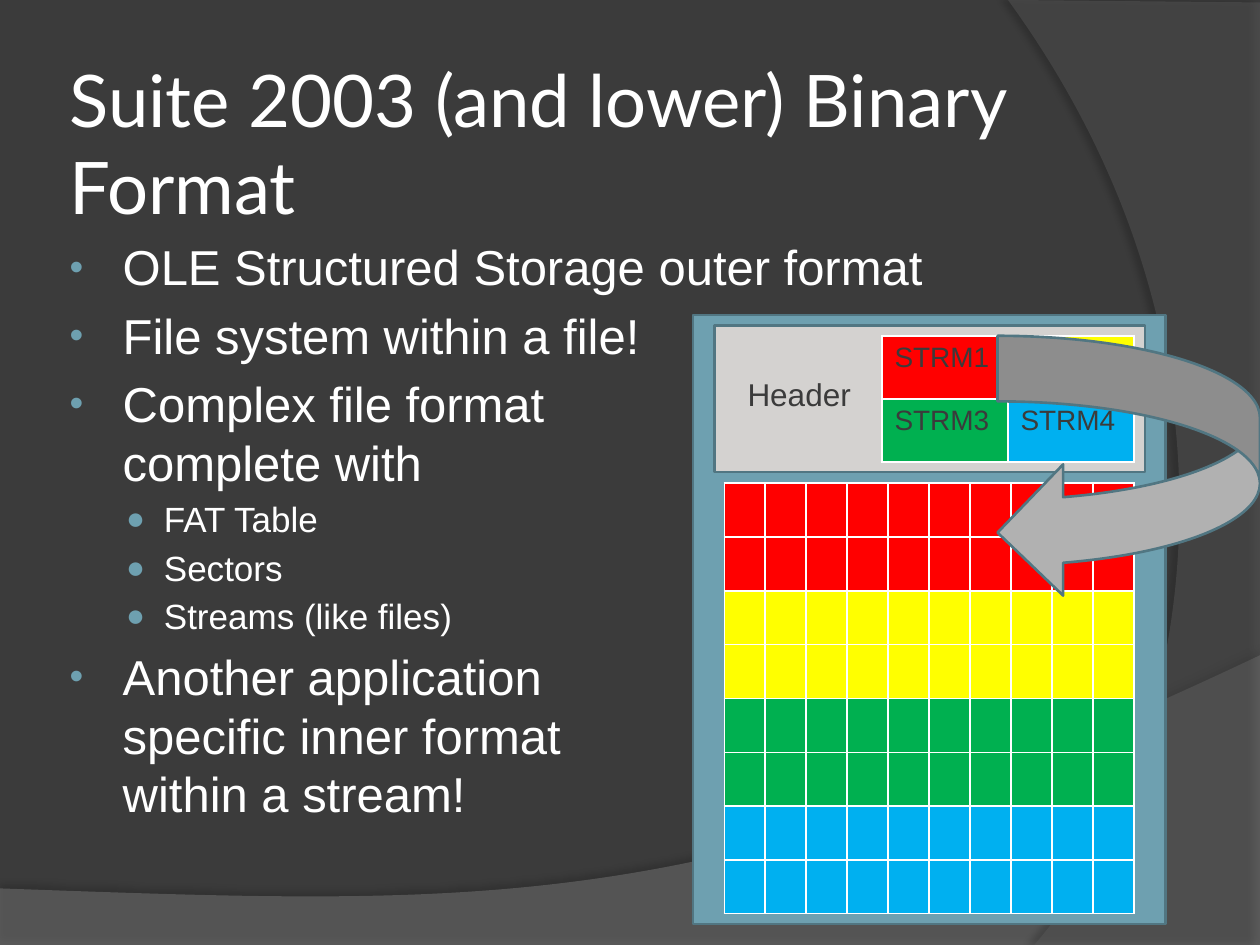
from lxml import etree
from pptx import Presentation
from pptx.dml.color import RGBColor
from pptx.enum.shapes import MSO_SHAPE
from pptx.enum.text import MSO_ANCHOR, MSO_AUTO_SIZE, PP_ALIGN
from pptx.oxml import parse_xml
from pptx.oxml.ns import qn
from pptx.util import Cm, Pt

RECT, ARROW = MSO_SHAPE.RECTANGLE, MSO_SHAPE.CURVED_LEFT_ARROW
LEFT, TOP, MIDDLE = PP_ALIGN.LEFT, MSO_ANCHOR.TOP, MSO_ANCHOR.MIDDLE
FIXED = MSO_AUTO_SIZE.NONE
NS = 'xmlns:a="http://schemas.openxmlformats.org/drawingml/2006/main"'
HUES = {
    "back": "3B3B3B", "wave": "7F7F7F", "arc": "5E5E5E", "white": "FFFFFF",
    "teal": "6EA0B0", "edge": "517682", "pale": "D4D2D0", "arrow": "B1B1B1",
    "red": "FF0000", "yellow": "FFFF00", "green": "00B050", "blue": "00B0F0",
}
STREAMS = ["red", "yellow", "green", "blue"]


def rgb(name):
    return RGBColor.from_string(HUES[name])


def write(par, text, size, hue, font="Arial"):
    """Add one styled run for each line of the text."""
    for num, line in enumerate(text.split("\n")):
        if num:
            par.add_line_break()
        run = par.add_run()
        run.text = line
        run.font.name, run.font.size = font, Pt(size)
        run.font.color.rgb = rgb(hue)


deck = Presentation()
deck.slide_width, deck.slide_height = Cm(25.4), Cm(19.05)
slide = deck.slides.add_slide(deck.slide_layouts[1])
slide.background.fill.solid()
slide.background.fill.fore_color.rgb = rgb("back")
shapes = slide.shapes

# Backdrop: four corners, then the three points of the curved edge;
# opacity, shadow opacity, blur, distance and direction follow
drops = [
    ("wave", [(0, 17.91), (0, 19.05), (25.4, 19.05), (25.4, 13.21),
              (14.2, 18.52), (9.93, 18.26), (0, 17.91)], 45, 35, 4, 3.5, 270),
    ("arc", [(25.4, 0.05), (25.4, 19.05), (20.85, 19.05),
             (23.75, 15.72), (25.86, 7.62), (20.32, 0)], 40, 45, 4, 4, 180),
]
for spot, (hue, dots, solid, dark, blur, dist, angle) in enumerate(drops):
    dots = [(Cm(x), Cm(y)) for x, y in dots]
    pen = shapes.build_freeform(*dots[0])
    pen.add_line_segments(dots[1:])
    form = pen.convert_to_shape()
    form.fill.solid()
    form.fill.fore_color.rgb = rgb(hue)
    form.line.fill.background()
    form.shadow.inherit = False
    props = form._element.spPr
    # The last three straight segments become one Bézier curve
    ends = list(props.iter(qn("a:lnTo")))[-3:]
    curve = etree.Element(qn("a:cubicBezTo"))
    ends[0].addprevious(curve)
    for end in ends:
        curve.append(end[0])
        end.getparent().remove(end)
    tint = props.find(qn("a:solidFill"))[0]
    etree.SubElement(tint, qn("a:alpha"), val=str(solid * 1000))
    props.find(qn("a:effectLst")).append(parse_xml(
        f'<a:outerShdw {NS} blurRad="{Pt(blur)}" dist="{Pt(dist)}" '
        f'dir="{angle * 60000}" rotWithShape="0"><a:srgbClr val="000000">'
        f'<a:alpha val="{dark * 1000}"/></a:srgbClr></a:outerShdw>'))
    shapes._spTree.insert(2 + spot, form._element)

# Title and list
title, body = shapes.title, slide.placeholders[1]
for box, area, anchor in [
    (title, (1.27, 1.27, 20.75, 3.18), MIDDLE),
    (body, (1.05, 4.65, 23.29, 6.15), TOP),
]:
    box.left, box.top, box.width, box.height = map(Cm, area)
    frame = box.text_frame
    frame.word_wrap, frame.auto_size = True, FIXED
    frame.vertical_anchor = anchor
frame = title.text_frame
frame.margin_left = frame.margin_right = Cm(0.13)
frame.paragraphs[0].alignment = LEFT
write(frame.paragraphs[0], "Suite 2003 (and lower) Binary Format", 41.4, "white", "Lato")

items = [
    (0, "OLE Structured Storage outer format"),
    (0, "File system within a file!"),
    (0, "Complex file format\ncomplete with"),
    (1, "FAT Table"),
    (1, "Sectors"),
    (1, "Streams (like files)"),
    (0, "Another application \nspecific inner format \nwithin a stream!"),
]
# Text size, left margin, hanging indent, bullet and its size in percent
levels = [(28, 1.17, -1.07, "•", 80), (20, 2, -0.76, "●", 90)]
frame = body.text_frame
for num, (level, text) in enumerate(items):
    size, margin, hang, mark, scale = levels[level]
    par = frame.add_paragraph() if num else frame.paragraphs[0]
    par.level, par.alignment = level, LEFT
    par.line_spacing, par.space_before = 1.0, Pt(size * 0.19)
    props = par._p.get_or_add_pPr()
    props.set("marL", str(Cm(margin)))
    props.set("indent", str(Cm(hang)))
    color = etree.SubElement(props, qn("a:buClr"))
    etree.SubElement(color, qn("a:srgbClr"), val=HUES["teal"])
    etree.SubElement(props, qn("a:buSzPct"), val=str(scale * 1000))
    etree.SubElement(props, qn("a:buFont"), typeface="Arial")
    etree.SubElement(props, qn("a:buChar"), char=mark)
    write(par, text, size, "white")

# File diagram
blocks = {}
for name, kind, area, hue in [
    ("file", RECT, (13.97, 6.35, 9.53, 12.28), "teal"),
    ("header", RECT, (14.4, 6.56, 8.68, 2.96), "pale"),
    ("arrow", ARROW, (20.11, 6.77, 5.29, 5.29), "arrow"),
]:
    block = shapes.add_shape(kind, *map(Cm, area))
    block.fill.solid()
    block.fill.fore_color.rgb = rgb(hue)
    block.line.color.rgb, block.line.width = rgb("edge"), Pt(1.5)
    block.shadow.inherit = False
    blocks[name] = block

names = [["STRM1", "STRM2"], ["STRM3", "STRM4"]]
sectors = [[""] * 10 for _ in range(8)]
for area, texts, hues in [
    ((17.78, 6.77, 5.08, 2.54), names, [STREAMS[:2], STREAMS[2:]]),
    ((14.6, 9.74, 8.26, 8.68), sectors, [[STREAMS[r // 2]] * 10 for r in range(8)]),
]:
    grid = shapes.add_table(len(texts), len(texts[0]), *map(Cm, area)).table
    grid.first_row = grid.horz_banding = False
    for r, line in enumerate(texts):
        for c, text in enumerate(line):
            cell = grid.cell(r, c)
            if text:
                write(cell.text_frame.paragraphs[0], text, 16, "back")
            props = cell._tc.get_or_add_tcPr()
            for side in ("lnL", "lnR", "lnT", "lnB"):
                props.append(parse_xml(
                    f'<a:{side} {NS} w="{Pt(1)}"><a:solidFill><a:srgbClr '
                    f'val="{HUES["white"]}"/></a:solidFill></a:{side}>'))
            cell.fill.solid()
            cell.fill.fore_color.rgb = rgb(hues[r][c])

label = shapes.add_textbox(Cm(14.82), Cm(7.44), Cm(2.74), Cm(1.02))
label.text_frame.word_wrap = True
write(label.text_frame.paragraphs[0], "Header", 18, "back")
shapes._spTree.append(blocks["arrow"]._element)

deck.save("out.pptx")
